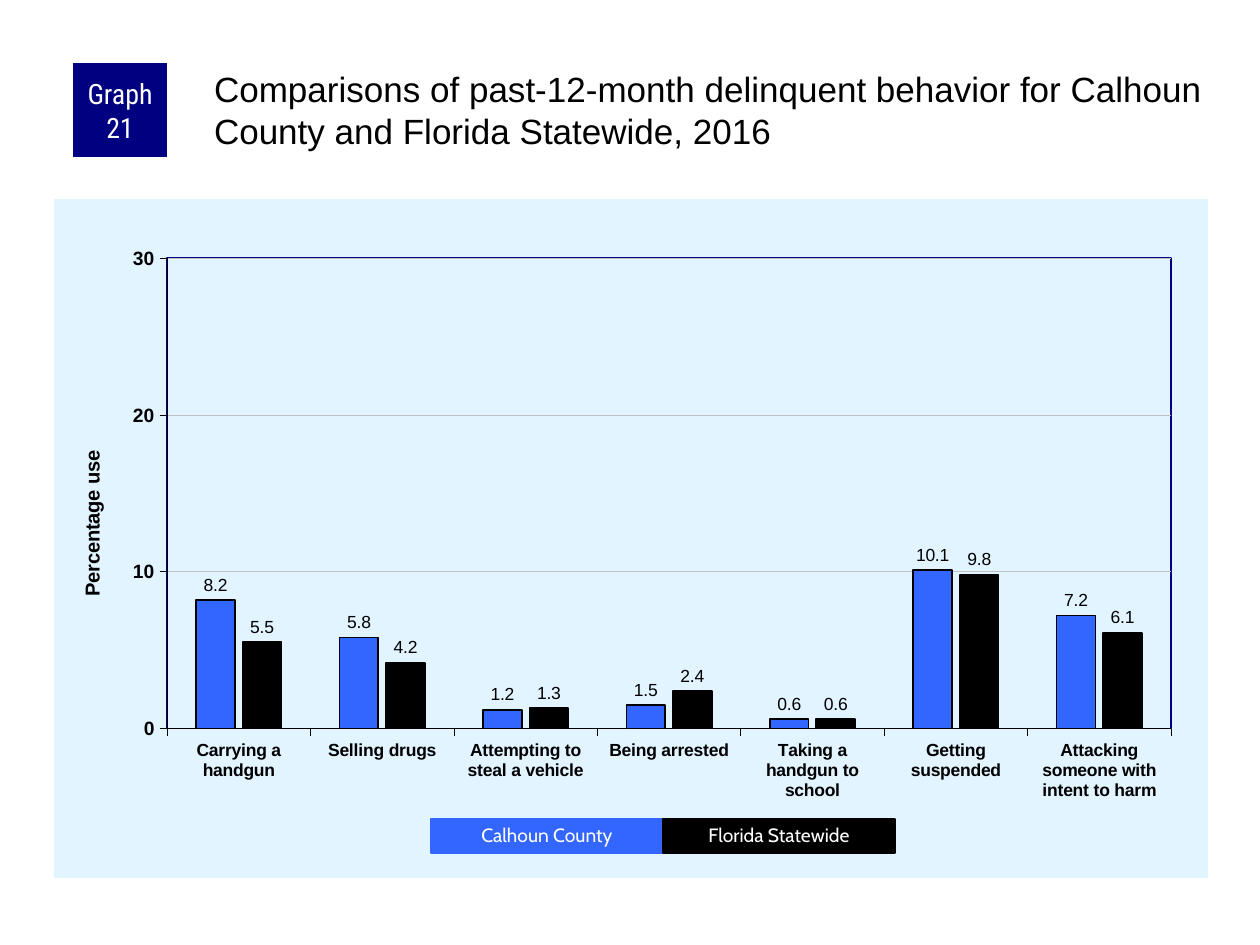
from lxml import etree
from pptx import Presentation
from pptx import util as u
from pptx.chart.data import CategoryChartData
from pptx.dml.color import RGBColor
from pptx.enum import chart as charts, shapes, text
from pptx.oxml import parse_xml
from pptx.oxml.ns import nsdecls, qn

PX = 914400 / 126
NAVY = RGBColor(0x00, 0x00, 0x80)
BLUE = RGBColor(0x33, 0x66, 0xFF)
BLACK = RGBColor(0x00, 0x00, 0x00)
WHITE = RGBColor(0xFF, 0xFF, 0xFF)
GRAY = RGBColor(0xC0, 0xC0, 0xC0)
PALE = RGBColor(0xE1, 0xF4, 0xFF)

CATEGORIES = ["Carrying a handgun", "Selling drugs", "Attempting to steal a vehicle",
              "Being arrested", "Taking a handgun to school", "Getting suspended",
              "Attacking someone with intent to harm"]
# Name, bar colour, values
SERIES = [("Calhoun County", BLUE, [8.2, 5.8, 1.2, 1.5, 0.6, 10.1, 7.2]),
          ("Florida Statewide", BLACK, [5.5, 4.2, 1.3, 2.4, 0.6, 9.8, 6.1])]


def px(*lengths):
    return [u.Emu(round(length * PX)) for length in lengths]


def style_font(font, size, color, name="Arial", bold=False):
    font.size, font.name, font.bold = u.Pt(size), name, bold
    font.color.rgb = color


def style_line(line, color, width):
    line.color.rgb = color
    line.width = u.Pt(width)


def set_insets(frame, left, top, right, bottom):
    (frame.margin_left, frame.margin_top,
     frame.margin_right, frame.margin_bottom) = px(left, top, right, bottom)


def add_block(page, box, fill, words, size, font_name):
    """A filled rectangle with one centred white paragraph."""
    block = page.shapes.add_shape(shapes.MSO_SHAPE.RECTANGLE, *px(*box))
    block.shadow.inherit = False
    block.fill.solid()
    block.fill.fore_color.rgb = fill
    block.line.fill.background()
    frame = block.text_frame
    frame.word_wrap = True
    frame.vertical_anchor = text.MSO_ANCHOR.MIDDLE
    set_insets(frame, 6, 0, 6, 0)
    para = frame.paragraphs[0]
    para.alignment = text.PP_ALIGN.CENTER
    span = para.add_run()
    span.text = words
    style_font(span.font, size, WHITE, font_name)
    return block


def add_header(page, box):
    left, top, width, height = box
    # Graph number
    add_block(page, (left, top, 94, 94), NAVY, "Graph 21", 16, "Roboto Condensed")
    # Title
    title = page.shapes.title
    title.left, title.top, title.width, title.height = px(left + 137, top, width - 137, height)
    frame = title.text_frame
    frame.word_wrap = True
    frame.auto_size = text.MSO_AUTO_SIZE.NONE
    frame.vertical_anchor = text.MSO_ANCHOR.TOP
    set_insets(frame, 4, 4, 0, 0)
    para = frame.paragraphs[0]
    para.alignment = text.PP_ALIGN.LEFT
    para.line_spacing = 1.0
    para.space_before = u.Pt(0)
    span = para.add_run()
    span.text = ("Comparisons of past-12-month delinquent behavior "
                 "for Calhoun County and Florida Statewide, 2016")
    style_font(span.font, 20, BLACK)


def style_plot_area(chart):
    """Fix the inner plot rectangle and give it a navy border."""
    area = chart._chartSpace.chart.plotArea
    for old in area.findall(qn("c:layout")):
        area.remove(old)
    layout = etree.Element(qn("c:layout"))
    manual = etree.SubElement(layout, qn("c:manualLayout"))
    for tag, value in (("layoutTarget", "inner"), ("xMode", "edge"), ("yMode", "edge"),
                       ("x", "0.098"), ("y", "0.087"), ("w", "0.87"), ("h", "0.693")):
        etree.SubElement(manual, qn("c:" + tag)).set("val", value)
    area.insert(0, layout)
    area.append(parse_xml(
        f'<c:spPr {nsdecls("c", "a")}><a:noFill/><a:ln w="12700"><a:solidFill>'
        f'<a:srgbClr val="{NAVY}"/></a:solidFill></a:ln></c:spPr>'))


def style_axes(chart):
    for axis, size in ((chart.category_axis, 10), (chart.value_axis, 11)):
        axis.major_tick_mark = charts.XL_TICK_MARK.OUTSIDE
        axis.minor_tick_mark = charts.XL_TICK_MARK.NONE
        style_font(axis.tick_labels.font, size, BLACK, bold=True)
        style_line(axis.format.line, BLACK, 0.25)
    values = chart.value_axis
    values.minimum_scale, values.maximum_scale, values.major_unit = 0, 30, 10
    values.tick_labels.number_format = "0"
    values.tick_labels.number_format_is_linked = False
    style_line(values.major_gridlines.format.line, GRAY, 0.25)
    span = values.axis_title.text_frame.paragraphs[0].add_run()
    span.text = "Percentage use"
    style_font(span.font, 11.5, BLACK, bold=True)


def add_bar_chart(page, box):
    data = CategoryChartData(number_format="0.0")
    data.categories = CATEGORIES
    for name, _, values in SERIES:
        data.add_series(name, values)
    chart = page.shapes.add_chart(
        charts.XL_CHART_TYPE.COLUMN_CLUSTERED, *px(*box), data).chart
    chart.has_title = chart.has_legend = False
    style_font(chart.font, 11.5, BLACK)
    # Panel background, placed before the chart's text properties
    space = chart._chartSpace
    space.find(qn("c:txPr")).addprevious(parse_xml(
        f'<c:spPr {nsdecls("c", "a")}><a:solidFill><a:srgbClr val="{PALE}"/>'
        '</a:solidFill><a:ln><a:noFill/></a:ln></c:spPr>'))
    style_plot_area(chart)
    style_axes(chart)
    # Bars and their values
    plot = chart.plots[0]
    plot.gap_width, plot.overlap, plot.vary_by_categories = 150, -20, False
    for bars, (_, color, _) in zip(plot.series, SERIES):
        bars.format.fill.solid()
        bars.format.fill.fore_color.rgb = color
        style_line(bars.format.line, BLACK, 1)
        labels = bars.data_labels
        labels.show_value = True
        labels.number_format, labels.number_format_is_linked = "0.0", False
        labels.position = charts.XL_LABEL_POSITION.OUTSIDE_END
        style_font(labels.font, 10, BLACK)


def add_key(page, box):
    left, top, width, height = box
    step = width // len(SERIES)
    for index, (name, color, _) in enumerate(SERIES):
        block = add_block(page, (left + index * step, top, step, height),
                          color, name, 11, "Cabin")
        style_line(block.line, color, 0.75)
        block.text_frame.paragraphs[0].line_spacing = 0.9


def main():
    deck = Presentation()
    deck.slide_width, deck.slide_height = px(1260, 945)
    page = deck.slides.add_slide(deck.slide_layouts[5])
    add_bar_chart(page, (54, 199, 1154, 679))
    add_header(page, (73, 63, 1135, 105))
    add_key(page, (431, 819, 464, 34))
    deck.save("out.pptx")


if __name__ == "__main__":
    main()
